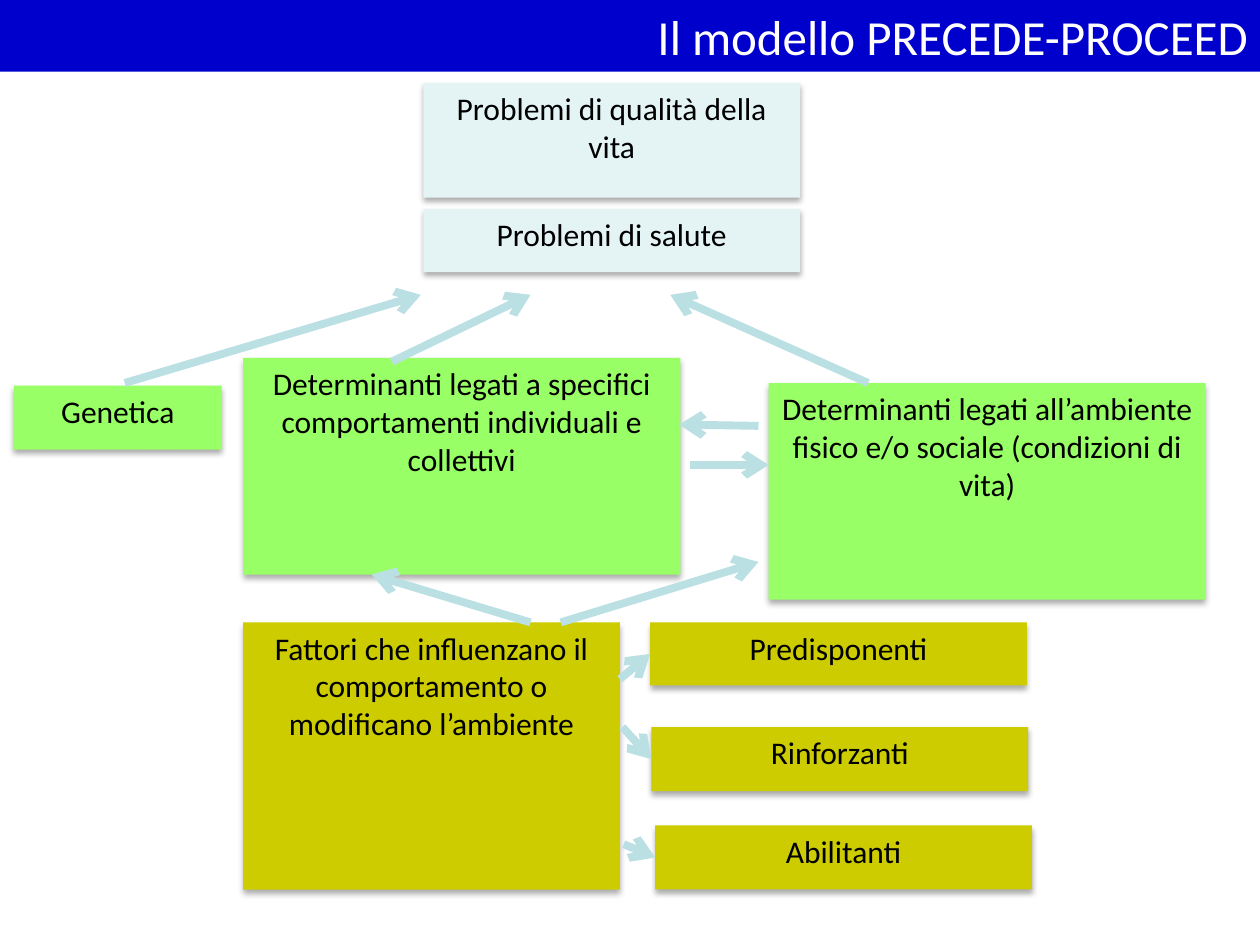
import pptx
import pptx.dml.color
import pptx.enum.shapes
import pptx.enum.text
import pptx.oxml
import pptx.oxml.ns
import pptx.util

RGBColor = pptx.dml.color.RGBColor
Align = pptx.enum.text.PP_ALIGN

WHITE = RGBColor(0xFF, 0xFF, 0xFF)
BLACK = RGBColor(0x00, 0x00, 0x00)
BLUE = RGBColor(0x00, 0x00, 0xCC)
ICE = RGBColor(0xE4, 0xF3, 0xF4)
GREEN = RGBColor(0x99, 0xFF, 0x66)
OLIVE = RGBColor(0xCC, 0xCC, 0x00)
AQUA = RGBColor(0xBB, 0xE0, 0xE3)

WIDTH = pptx.util.Inches(10)
HEIGHT = pptx.util.Inches(7.5)
COLUMNS = 100
ROWS = 75

SHADOW = (
    f"<a:effectLst {pptx.oxml.ns.nsdecls('a')}>"
    '<a:outerShdw blurRad="44450" dist="27940" dir="5400000" algn="ctr">'
    '<a:srgbClr val="000000"><a:alpha val="32000"/></a:srgbClr>'
    "</a:outerShdw></a:effectLst>"
)

PROBLEMS = [
    ("Problemi di qualità della vita", (33.6, 6.6, 29.9, 9.1), ICE),
    ("Problemi di salute", (33.6, 16.6, 29.9, 5), ICE),
]
DETERMINANTS = [
    ("Genetica", (1.1, 30.6, 16.5, 5.1), GREEN),
    ("Determinanti legati a specifici comportamenti individuali e collettivi",
     (19.3, 28.4, 34.7, 17.2), GREEN),
    ("Determinanti legati all’ambiente fisico e/o sociale (condizioni di vita)",
     (61, 30.4, 34.7, 17.2), GREEN),
]
INFLUENCES = [
    ("Fattori che influenzano il comportamento o modificano l’ambiente",
     (19.3, 49.4, 29.9, 21.2), OLIVE),
]
FACTORS = [
    ("Predisponenti", (51.6, 49.4, 29.9, 5), (49.2, 53.9)),
    ("Rinforzanti", (51.7, 57.7, 29.9, 5.1), (49.4, 57.7)),
    ("Abilitanti", (52, 65.5, 29.9, 5.1), (49.5, 67)),
]
FREE_ARROWS = [
    ((9.9, 30.4), (33.4, 23.4)),
    ((31.1, 28.7), (42.1, 23.4)),
    ((68.9, 30.4), (53.2, 23.4)),
    ((60.2, 33.8), (53.9, 33.7)),
    ((54.8, 36.9), (61, 36.9)),
    ((42.1, 49.4), (29.5, 45.6)),
    ((44.5, 49.4), (60.2, 44.6)),
]


def across(columns):
    return round(WIDTH * columns / COLUMNS)


def down(rows):
    return round(HEIGHT * rows / ROWS)


def write_text(shape, text, size=18, color=BLACK, align=Align.CENTER):
    frame = shape.text_frame
    frame.word_wrap = True
    frame.auto_size = pptx.enum.text.MSO_AUTO_SIZE.SHAPE_TO_FIT_TEXT
    frame.vertical_anchor = pptx.enum.text.MSO_ANCHOR.TOP
    paragraph = frame.paragraphs[0]
    paragraph.text = text
    paragraph.alignment = align
    paragraph.font.name = "Calibri"
    paragraph.font.size = pptx.util.Pt(size)
    paragraph.font.color.rgb = color


def add_box(slide, text, cell, fill, shadow=True, **text_format):
    left, top, width, height = cell
    shape = slide.shapes.add_shape(
        pptx.enum.shapes.MSO_SHAPE.RECTANGLE,
        across(left), down(top), across(width), down(height),
    )
    shape.fill.solid()
    shape.fill.fore_color.rgb = fill
    shape.line.fill.background()
    if shadow:
        shape.element.spPr.append(pptx.oxml.parse_xml(SHADOW))
    else:
        shape.shadow.inherit = False
    write_text(shape, text, **text_format)
    return shape


def add_arrow(slide, start, end):
    connector = slide.shapes.add_connector(
        pptx.enum.shapes.MSO_CONNECTOR.STRAIGHT,
        across(start[0]), down(start[1]), across(end[0]), down(end[1]),
    )
    connector.line.color.rgb = AQUA
    connector.line.width = pptx.util.Pt(4.5)
    namespace = pptx.oxml.ns.nsdecls("a")
    connector.line._get_or_add_ln().append(
        pptx.oxml.parse_xml(f'<a:tailEnd {namespace} type="arrow"/>')
    )
    connector.element.spPr.append(pptx.oxml.parse_xml(f"<a:effectLst {namespace}/>"))
    return connector


def add_factor(slide, text, cell, start):
    box = add_box(slide, text, cell, OLIVE)
    left, top, _, height = cell
    arrow = add_arrow(slide, start, (left, top + height / 2))
    arrow.end_connect(box, 1)


def main():
    presentation = pptx.Presentation()
    presentation.slide_width = WIDTH
    presentation.slide_height = HEIGHT
    slide = presentation.slides.add_slide(presentation.slide_layouts[6])

    add_box(slide, "Il modello PRECEDE-PROCEED", (0, 0, COLUMNS, 5.7), BLUE,
            shadow=False, size=28, color=WHITE, align=Align.RIGHT)
    for text, cell, fill in PROBLEMS + DETERMINANTS + INFLUENCES:
        add_box(slide, text, cell, fill)
    for text, cell, start in FACTORS:
        add_factor(slide, text, cell, start)
    for start, end in FREE_ARROWS:
        add_arrow(slide, start, end)

    presentation.save("out.pptx")


if __name__ == "__main__":
    main()
